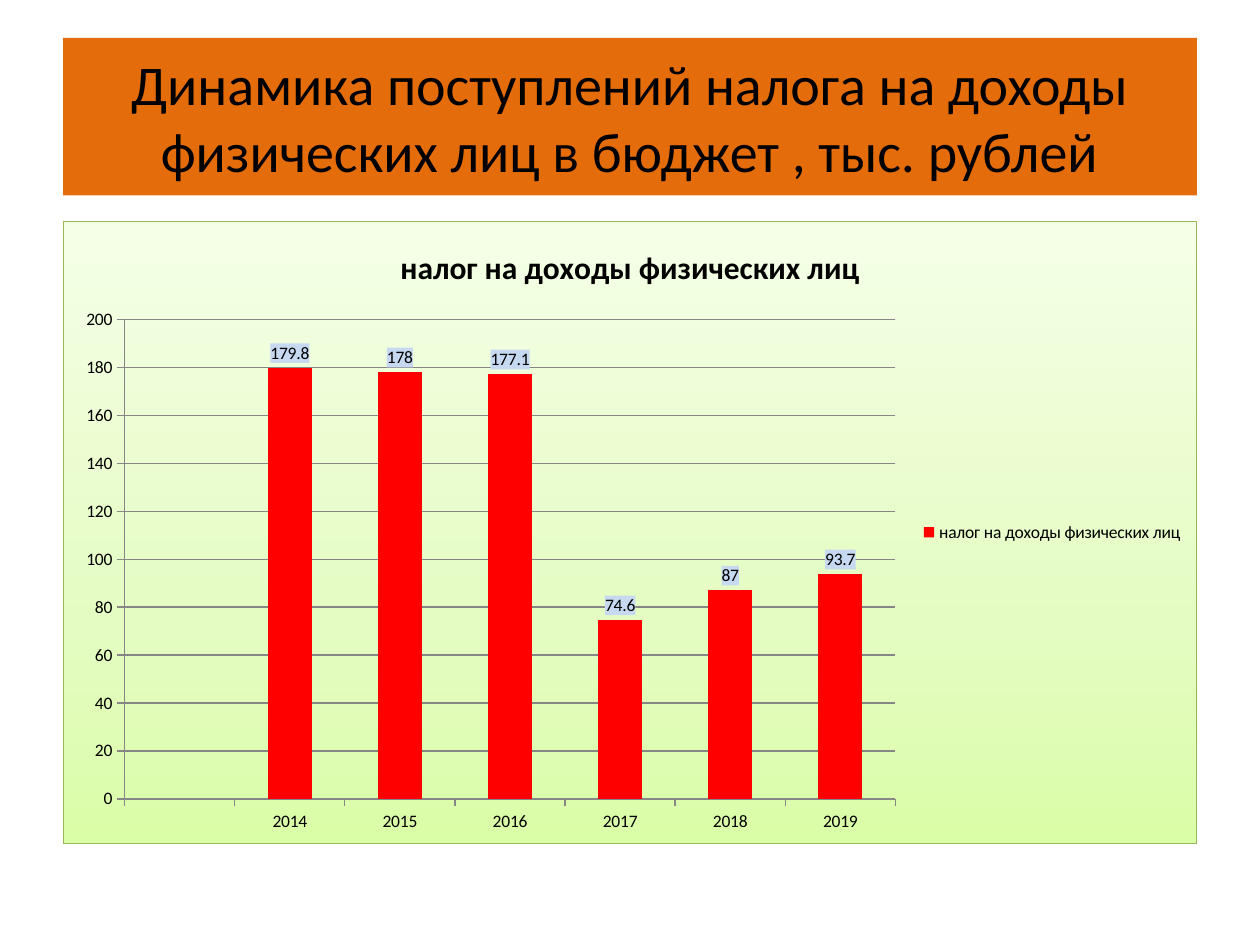
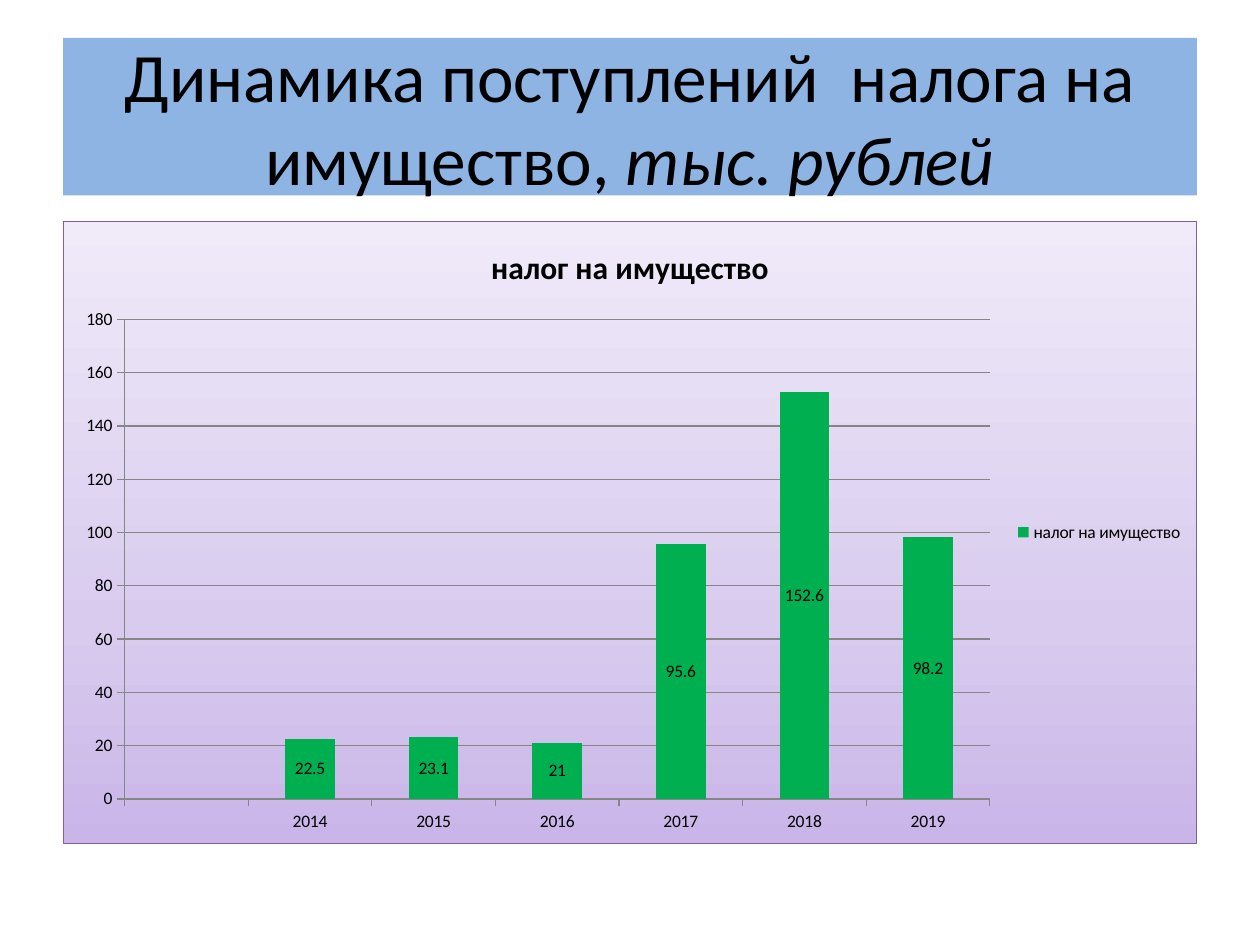
from lxml import etree
from pptx import Presentation
from pptx.chart.data import CategoryChartData
from pptx.dml.color import RGBColor
from pptx.enum.chart import XL_CHART_TYPE, XL_LABEL_POSITION, XL_LEGEND_POSITION, XL_TICK_MARK
from pptx.enum.text import MSO_ANCHOR, MSO_AUTO_SIZE, PP_ALIGN
from pptx.oxml import parse_xml
from pptx.oxml.ns import nsdecls
from pptx.util import Inches, Pt

CLUSTERED = XL_CHART_TYPE.COLUMN_CLUSTERED
STACKED = XL_CHART_TYPE.COLUMN_STACKED
LABEL_ABOVE = XL_LABEL_POSITION.OUTSIDE_END
LABEL_CENTER = XL_LABEL_POSITION.CENTER
LEGEND_RIGHT = XL_LEGEND_POSITION.RIGHT
TICK_OUTSIDE = XL_TICK_MARK.OUTSIDE
MIDDLE = MSO_ANCHOR.MIDDLE
NO_AUTOFIT = MSO_AUTO_SIZE.NONE
CENTER = PP_ALIGN.CENTER

WIDTH, HEIGHT = Inches(10), Inches(7.5)
MARGIN, CONTENT_WIDTH = 0.05, 0.9
TITLE_BAND = (MARGIN, 0.04, CONTENT_WIDTH, 1 / 6)
CHART_AREA = (MARGIN, 7 / 30, CONTENT_WIDTH, 0.66)
TITLE_ONLY = 5
FONT = "Calibri"
BLACK, GRID_GRAY = "000000", "868686"
YEARS = ["", "2014", "2015", "2016", "2017", "2018", "2019"]
GRADIENT_STOPS = (0, 35, 100)

INCOME_TAX = {
    "title": [("Динамика поступлений налога на доходы физических лиц в бюджет , тыс. рублей", False)],
    "title_size": 32,
    "band": "E46C0A",
    "name": "налог на доходы физических лиц",
    "values": [None, 179.8, 178, 177.1, 74.6, 87, 93.7],
    "type": CLUSTERED,
    "overlap": 0,
    "maximum": 200,
    "bar": "FF0000",
    "gradient": ("DAFDA7", "E4FCC2", "F5FFE7"),
    "border": "98B955",
    "label_position": LABEL_ABOVE,
    "label_fill": "C6D9F1",
}
PROPERTY_TAX = {
    "title": [("Динамика поступлений  налога на имущество, ", False), ("тыс. рублей", True)],
    "title_size": 39.6,
    "band": "8EB4E3",
    "name": "налог на имущество",
    "values": [None, 22.5, 23.1, 21, 95.6, 152.6, 98.2],
    "type": STACKED,
    "overlap": 100,
    "maximum": 180,
    "bar": "00B050",
    "gradient": ("C9B5E8", "D8CBEE", "F0EAF9"),
    "border": "7D60A0",
    "label_position": LABEL_CENTER,
    "label_fill": None,
}


def set_attributes(target, formats):
    for name, value in formats.items():
        setattr(target, name, value)


def paint(color_format, color):
    color_format.rgb = RGBColor.from_string(color)


def paint_fill(fill, color):
    fill.solid()
    paint(fill.fore_color, color)


def style_font(font, size, **formats):
    set_attributes(font, {"name": FONT, "size": Pt(size), **formats})
    paint(font.color, BLACK)


def place(area):
    left, top, width, height = area
    return [round(share * side) for share, side in
            ((left, WIDTH), (top, HEIGHT), (width, WIDTH), (height, HEIGHT))]


def fill_title(slide, tax):
    title = slide.shapes.title
    set_attributes(title, dict(zip(("left", "top", "width", "height"), place(TITLE_BAND))))
    paint_fill(title.fill, tax["band"])
    frame = title.text_frame
    set_attributes(frame, {"auto_size": NO_AUTOFIT, "vertical_anchor": MIDDLE, "word_wrap": True})
    paragraph = frame.paragraphs[0]
    paragraph.alignment = CENTER
    for text, italic in tax["title"]:
        run = paragraph.add_run()
        run.text = text
        style_font(run.font, tax["title_size"], italic=italic)


def shape_properties():
    return parse_xml(f'<c:spPr {nsdecls("c", "a")}/>')


def add_color(parent, tag, color, **attributes):
    namespace = parent.nsmap["a"]
    holder = etree.SubElement(parent, f"{{{namespace}}}{tag}", **attributes)
    etree.SubElement(holder, f"{{{namespace}}}srgbClr", val=color)
    return holder


def paint_chart_area(chart, gradient, border):
    properties = shape_properties()
    namespace = properties.nsmap["a"]
    fill = etree.SubElement(properties, f"{{{namespace}}}gradFill", rotWithShape="1")
    stops = etree.SubElement(fill, f"{{{namespace}}}gsLst")
    for position, color in zip(GRADIENT_STOPS, gradient):
        add_color(stops, "gs", color, pos=str(position * 1000))
    etree.SubElement(fill, f"{{{namespace}}}lin", ang=str(270 * 60000), scaled="1")
    outline = etree.SubElement(properties, f"{{{namespace}}}ln", w=str(Pt(0.75)))
    add_color(outline, "solidFill", border)
    chart._chartSpace.chart.addnext(properties)


def style_line(line):
    line.width = Pt(0.75)
    paint(line.color, GRID_GRAY)


def style_axes(chart, maximum):
    for axis in (chart.category_axis, chart.value_axis):
        axis.major_tick_mark = TICK_OUTSIDE
        style_line(axis.format.line)
    set_attributes(chart.value_axis, {"minimum_scale": 0, "maximum_scale": maximum,
                                      "major_unit": 20, "has_major_gridlines": True})
    style_line(chart.value_axis.major_gridlines.format.line)


def style_labels(labels, position, color):
    set_attributes(labels, {"show_value": True, "position": position})
    if color:
        properties = shape_properties()
        add_color(properties, "solidFill", color)
        labels._element.insert(0, properties)


def add_tax_chart(slide, tax):
    data = CategoryChartData()
    data.categories = YEARS
    data.add_series(tax["name"], tax["values"])
    chart = slide.shapes.add_chart(tax["type"], *place(CHART_AREA), data).chart
    style_font(chart.font, 10)
    set_attributes(chart, {"has_title": True, "has_legend": True})
    chart_title = chart.chart_title.text_frame
    chart_title.text = tax["name"]
    style_font(chart_title.paragraphs[0].runs[0].font, 18, bold=True)
    set_attributes(chart.legend, {"position": LEGEND_RIGHT, "include_in_layout": False})
    plot = chart.plots[0]
    set_attributes(plot, {"gap_width": 150, "overlap": tax["overlap"], "vary_by_categories": False})
    series = plot.series[0]
    paint_fill(series.format.fill, tax["bar"])
    style_labels(series.data_labels, tax["label_position"], tax["label_fill"])
    style_axes(chart, tax["maximum"])
    paint_chart_area(chart, tax["gradient"], tax["border"])


def main():
    presentation = Presentation()
    set_attributes(presentation, {"slide_width": WIDTH, "slide_height": HEIGHT})
    for tax in (INCOME_TAX, PROPERTY_TAX):
        slide = presentation.slides.add_slide(presentation.slide_layouts[TITLE_ONLY])
        fill_title(slide, tax)
        add_tax_chart(slide, tax)
    presentation.save("out.pptx")


if __name__ == "__main__":
    main()
